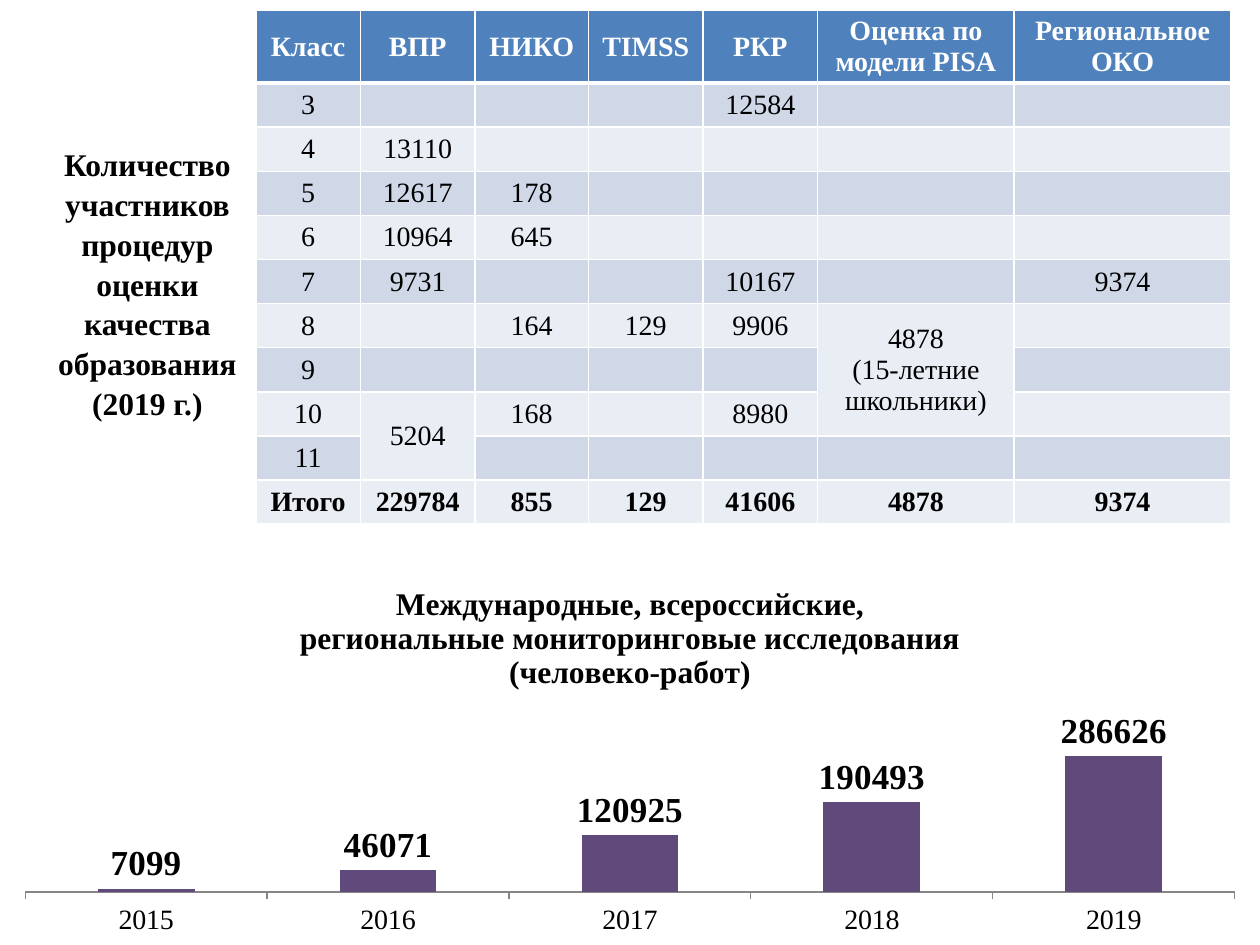
from lxml.etree import SubElement
from pptx import Presentation
from pptx.chart.data import CategoryChartData
from pptx.dml.color import RGBColor
from pptx.enum.chart import XL_CHART_TYPE, XL_LABEL_POSITION, XL_TICK_LABEL_POSITION, XL_TICK_MARK
from pptx.enum.text import MSO_ANCHOR, PP_ALIGN
from pptx.oxml import parse_xml
from pptx.oxml.ns import nsdecls, qn
from pptx.util import Inches, Pt

FONT = "Times New Roman"
BLACK = RGBColor(0x00, 0x00, 0x00)
WHITE = RGBColor(0xFF, 0xFF, 0xFF)
HEADER_BLUE = RGBColor(0x4F, 0x81, 0xBD)
BAND_DARK = RGBColor(0xD0, 0xD8, 0xE8)
BAND_LIGHT = RGBColor(0xE9, 0xED, 0xF4)
PURPLE = RGBColor(0x60, 0x4A, 0x7B)
AXIS_GRAY = RGBColor(0x86, 0x86, 0x86)

COLUMN_WIDTHS = [0.83, 0.91, 0.9, 0.91, 0.91, 1.56, 1.72]
HEADER_HEIGHT = 0.58
ROW_HEIGHT = 0.35
ROWS = [
    ["Класс", "ВПР", "НИКО", "TIMSS", "РКР", "Оценка по модели PISA", "Региональное ОКО"],
    ["3", "", "", "", "12584", "", ""],
    ["4", "13110", "", "", "", "", ""],
    ["5", "12617", "178", "", "", "", ""],
    ["6", "10964", "645", "", "", "", ""],
    ["7", "9731", "", "", "10167", "", "9374"],
    ["8", "", "164", "129", "9906", "4878\n(15-летние школьники)", ""],
    ["9", "", "", "", "", "", ""],
    ["10", "5204", "168", "", "8980", "", ""],
    ["11", "", "", "", "", "", ""],
    ["Итого", "229784", "855", "129", "41606", "4878", "9374"],
]
# First and last cell (row, column) of each merged block
MERGES = [((6, 5), (8, 5)), ((8, 1), (9, 1))]

PARTICIPANTS = {"2015": 7099, "2016": 46071, "2017": 120925, "2018": 190493, "2019": 286626}


def format_font(font, size=16, color=BLACK, bold=False):
    font.name = FONT
    font.size = Pt(size)
    font.bold = bold
    font.color.rgb = color


def write_text(text_frame, text, line_spacing=None, **font_format):
    """Write centred paragraphs, one for each line of the text."""
    for index, line in enumerate(text.split("\n")):
        paragraph = text_frame.paragraphs[0] if index == 0 else text_frame.add_paragraph()
        paragraph.alignment = PP_ALIGN.CENTER
        if line_spacing:
            paragraph.line_spacing = line_spacing
        run = paragraph.add_run()
        run.text = line
        format_font(run.font, **font_format)


def set_borders(cell, color, bottom_width):
    properties = cell._tc.get_or_add_tcPr()
    widths = {"L": 1, "R": 1, "T": 1, "B": bottom_width}
    for position, (side, width) in enumerate(widths.items()):
        properties.insert(position, parse_xml(
            f'<a:ln{side} {nsdecls("a")} w="{Pt(width)}"><a:solidFill>'
            f'<a:srgbClr val="{color}"/></a:solidFill></a:ln{side}>'))


def add_title(slide, left, top, width, height):
    box = slide.shapes.add_textbox(Inches(left), Inches(top), Inches(width), Inches(height))
    box.text_frame.word_wrap = True
    write_text(box.text_frame,
               "Количество участников процедур оценки качества образования\n(2019 г.)",
               size=18, bold=True, line_spacing=1.05)


def add_participants_table(slide, left, top, width, height):
    table = slide.shapes.add_table(len(ROWS), len(COLUMN_WIDTHS), Inches(left), Inches(top),
                                   Inches(width), Inches(height)).table
    for column, column_width in zip(table.columns, COLUMN_WIDTHS):
        column.width = Inches(column_width)

    last_row = len(ROWS) - 1
    for row_index, values in enumerate(ROWS):
        is_header = row_index == 0
        band = BAND_DARK if row_index % 2 else BAND_LIGHT
        table.rows[row_index].height = Inches(HEADER_HEIGHT if is_header else ROW_HEIGHT)
        for column_index, value in enumerate(values):
            cell = table.cell(row_index, column_index)
            cell.margin_left = cell.margin_right = Inches(0.05)
            cell.margin_top = cell.margin_bottom = Inches(0.02)
            cell.vertical_anchor = MSO_ANCHOR.MIDDLE
            cell.fill.solid()
            cell.fill.fore_color.rgb = HEADER_BLUE if is_header else band
            set_borders(cell, WHITE, bottom_width=3 if is_header else 1)
            if value:
                write_text(cell.text_frame, value, color=WHITE if is_header else BLACK,
                           bold=row_index in (0, last_row))

    for first, last in MERGES:
        table.cell(*first).merge(table.cell(*last))


def set_plot_layout(chart, **fractions):
    """Fix the inner plot area as fractions of the chart."""
    plot_area = chart._chartSpace.chart.plotArea
    for old_layout in plot_area.findall(qn("c:layout")):
        plot_area.remove(old_layout)
    layout = parse_xml(f'<c:layout {nsdecls("c")}><c:manualLayout/></c:layout>')
    settings = {"layoutTarget": "inner", "xMode": "edge", "yMode": "edge", **fractions}
    for name, value in settings.items():
        SubElement(layout[0], qn(f"c:{name}")).set("val", str(value))
    plot_area.insert(0, layout)


def add_research_chart(slide, left, top, width, height):
    data = CategoryChartData()
    data.categories = list(PARTICIPANTS)
    data.add_series("Series 1", list(PARTICIPANTS.values()))
    chart = slide.shapes.add_chart(XL_CHART_TYPE.COLUMN_CLUSTERED, Inches(left), Inches(top),
                                   Inches(width), Inches(height), data).chart
    format_font(chart.font, size=12)
    chart.has_legend = False

    # Title
    chart.has_title = True
    chart.chart_title.include_in_layout = False
    write_text(chart.chart_title.text_frame,
               "Международные, всероссийские,\nрегиональные мониторинговые исследования\n"
               "(человеко-работ)", size=18, bold=True)

    # Axes
    category_axis = chart.category_axis
    category_axis.major_tick_mark = XL_TICK_MARK.OUTSIDE
    category_axis.format.line.color.rgb = AXIS_GRAY
    format_font(category_axis.tick_labels.font, size=16)
    value_axis = chart.value_axis
    value_axis.visible = False
    value_axis.has_major_gridlines = False
    value_axis.tick_label_position = XL_TICK_LABEL_POSITION.NONE
    value_axis.minimum_scale = 0
    value_axis.maximum_scale = 400000
    value_axis.major_unit = 100000

    # Columns and their labels
    plot = chart.plots[0]
    plot.gap_width = 150
    plot.vary_by_categories = False
    series = plot.series[0]
    series.format.fill.solid()
    series.format.fill.fore_color.rgb = PURPLE
    labels = series.data_labels
    labels.show_value = True
    labels.position = XL_LABEL_POSITION.OUTSIDE_END
    format_font(labels.font, size=20, bold=True)
    set_plot_layout(chart, x=0.02, y=0.36, w=0.96, h=0.5)


def main():
    presentation = Presentation()
    presentation.slide_width = Inches(10)
    presentation.slide_height = Inches(7.5)
    slide = presentation.slides.add_slide(presentation.slide_layouts[6])
    add_participants_table(slide, 2.03, 0.08, 7.74, 4.08)
    add_title(slide, 0.23, 1.09, 1.88, 2.22)
    add_research_chart(slide, 0, 4.5, 10, 3)
    presentation.save("out.pptx")


if __name__ == "__main__":
    main()
